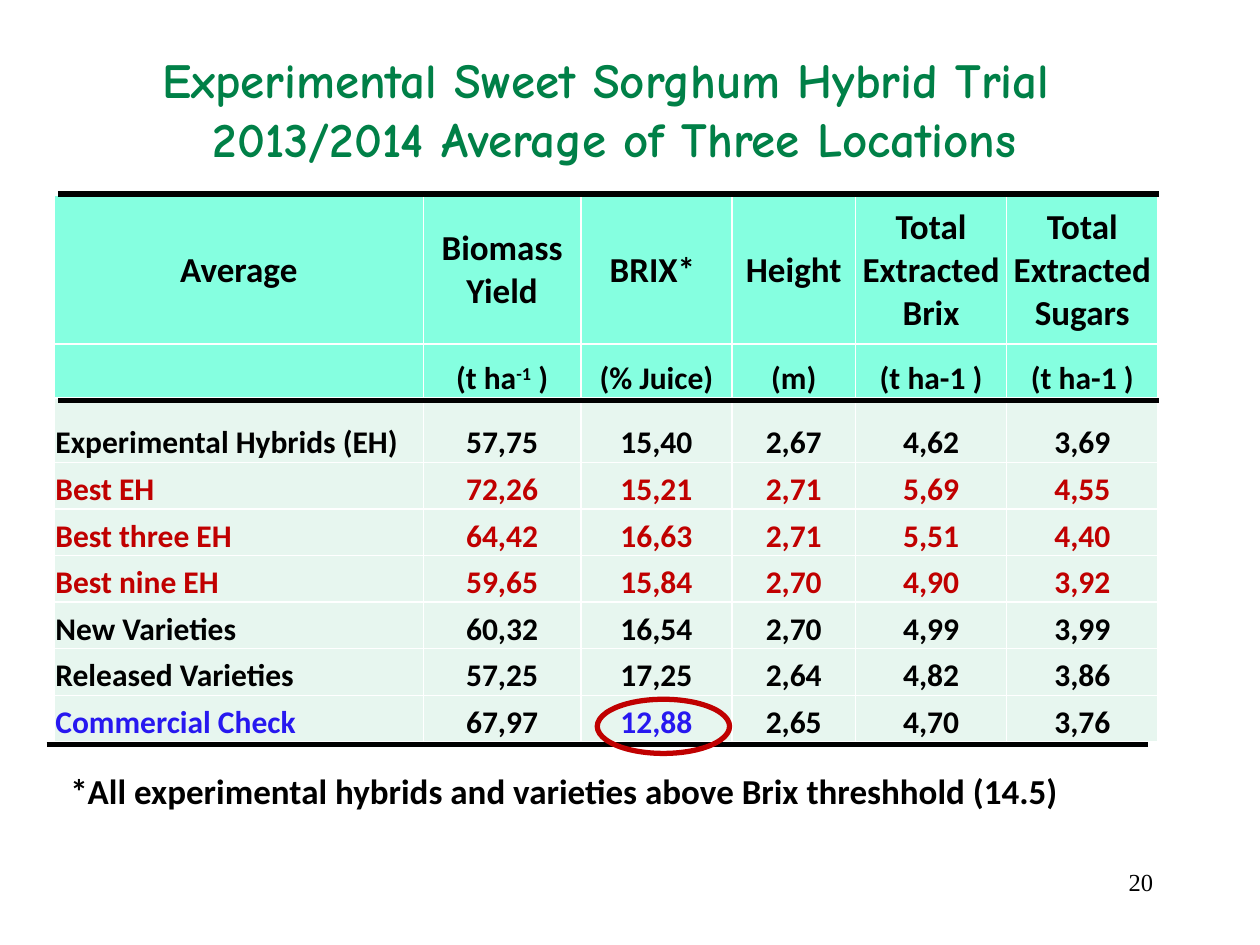
import pptx
import pptx.dml.color
import pptx.enum.shapes
import pptx.enum.text
import pptx.oxml
import pptx.oxml.ns
import pptx.util
from dataclasses import dataclass
from pptx.util import Inches

ALIGN = pptx.enum.text.PP_ALIGN
ANCHOR = pptx.enum.text.MSO_ANCHOR


@dataclass(frozen=True)
class Theme:
    black: str = "000000"
    white: str = "FFFFFF"
    green: str = "008047"
    red: str = "C00000"
    blue: str = "2718F0"
    header_fill: str = "85FFE0"
    body_fill: str = "E7F6EF"
    title_font: str = "Comic Neue"
    body_font: str = "Calibri"
    number_font: str = "Times New Roman"
    title_size: int = 28
    heading_size: int = 20
    cell_size: int = 18
    number_size: int = 14
    rule_width: int = 3


theme = Theme()


def rgb(color):
    return pptx.dml.color.RGBColor.from_string(color)


def style(paragraph, name, size, color, bold, align):
    paragraph.alignment = align
    font = paragraph.font
    font.name, font.size, font.bold = name, pptx.util.Pt(size), bold
    font.color.rgb = rgb(color)


presentation = pptx.Presentation()
presentation.slide_width = Inches(10)
presentation.slide_height = Inches(7.5)
slide = presentation.slides.add_slide(presentation.slide_layouts[5])

# Slide number
number = slide.shapes.add_textbox(Inches(7.17), Inches(6.83), Inches(2.08), Inches(0.5)).text_frame
number.word_wrap = True
number.text = "20"
style(number.paragraphs[0], theme.number_font, theme.number_size, theme.black, False, ALIGN.RIGHT)

# Trial results table
column_widths = [2.93, 1.25, 1.2, 0.98, 1.2, 1.2]
row_heights = [1.18, 0.43, 0.51] + [0.37] * 6
results = [
    ["Average", "Biomass Yield", "BRIX* ", "Height", "Total Extracted Brix", "Total Extracted Sugars"],
    ["", "(t ha^-1^ )", "(% Juice)", "(m)", "(t ha-1 )", "(t ha-1 )"],
    ["Experimental Hybrids (EH)", "57,75", "15,40", "2,67", "4,62", "3,69"],
    ["Best EH", "72,26", "15,21", "2,71", "5,69", "4,55"],
    ["Best three EH", "64,42", "16,63", "2,71", "5,51", "4,40"],
    ["Best nine EH", "59,65", "15,84", "2,70", "4,90", "3,92"],
    ["New Varieties", "60,32", "16,54", "2,70", "4,99", "3,99"],
    ["Released Varieties", "57,25", "17,25", "2,64", "4,82", "3,86"],
    ["Commercial Check", "67,97", "12,88", "2,65", "4,70", "3,76"],
]
check_row = len(results) - 1
table = slide.shapes.add_table(
    len(results), len(column_widths), Inches(0.43), Inches(1.55), Inches(8.77), Inches(4.37)
).table
table.first_row = table.horz_banding = False
for column, width in zip(table.columns, column_widths):
    column.width = Inches(width)
for table_row, height in zip(table.rows, row_heights):
    table_row.height = Inches(height)

for r, values in enumerate(results):
    for c, value in enumerate(values):
        cell = table.cell(r, c)
        cell.margin_left = cell.margin_right = cell.margin_top = Inches(0.01)
        cell.margin_bottom = 0
        cell.vertical_anchor = ANCHOR.MIDDLE if r == 0 else ANCHOR.BOTTOM

        # White cell borders come before the fill in the cell properties
        properties = cell._tc.get_or_add_tcPr()
        for side in ("lnL", "lnR", "lnT", "lnB"):
            properties.append(pptx.oxml.parse_xml(
                f'<a:{side} {pptx.oxml.ns.nsdecls("a")} w="12700"><a:solidFill>'
                f'<a:srgbClr val="{theme.white}"/></a:solidFill></a:{side}>'))
        cell.fill.solid()
        cell.fill.fore_color.rgb = rgb(theme.header_fill if r < 2 else theme.body_fill)

        # Best hybrids in red, the commercial check and its Brix in blue
        color = theme.black
        if 3 <= r <= 5:
            color = theme.red
        elif r == check_row and c in (0, 2):
            color = theme.blue
        paragraph = cell.text_frame.paragraphs[0]
        style(paragraph, theme.body_font, theme.heading_size if r == 0 else theme.cell_size,
              color, True, ALIGN.LEFT if c == 0 and r > 1 else ALIGN.CENTER)

        # Text between carets is superscript
        for i, part in enumerate(value.split("^")):
            if part:
                run = paragraph.add_run()
                run.text = part
                if i % 2:
                    run._r.get_or_add_rPr().set("baseline", "30000")

# Title
title = slide.shapes.title
title.left, title.top, title.width, title.height = Inches(0.65), Inches(0.34), Inches(8.45), Inches(1.04)
heading = title.text_frame
heading.text = "Experimental Sweet Sorghum Hybrid Trial \n2013/2014 Average of Three Locations"
heading.word_wrap = False
heading.auto_size = pptx.enum.text.MSO_AUTO_SIZE.NONE
heading.vertical_anchor = ANCHOR.TOP
for paragraph in heading.paragraphs:
    style(paragraph, theme.title_font, theme.title_size, theme.green, True, ALIGN.CENTER)

# Footnote
footnote = slide.shapes.add_textbox(Inches(0.46), Inches(6.06), Inches(8.17), Inches(0.44)).text_frame
footnote.word_wrap = False
footnote.text = "*All experimental hybrids and varieties above Brix threshhold (14.5)"
style(footnote.paragraphs[0], theme.body_font, theme.heading_size, theme.black, True, ALIGN.LEFT)

# Table rules
for left, top in ((0.46, 1.54), (0.46, 3.18), (0.37, 5.91)):
    rule = slide.shapes.add_connector(
        pptx.enum.shapes.MSO_CONNECTOR.STRAIGHT,
        Inches(left), Inches(top), Inches(left + 8.74), Inches(top))
    rule.line.color.rgb = rgb(theme.black)
    rule.line.width = pptx.util.Pt(theme.rule_width)
    rule._element.spPr.append(pptx.oxml.parse_xml(f'<a:effectLst {pptx.oxml.ns.nsdecls("a")}/>'))

# Ring around the Brix value of the commercial check
brix_ring = slide.shapes.add_shape(
    pptx.enum.shapes.MSO_SHAPE.OVAL, Inches(4.74), Inches(5.55), Inches(1.05), Inches(0.43))
brix_ring.shadow.inherit = False
brix_ring.fill.background()
brix_ring.line.color.rgb = rgb(theme.red)
brix_ring.line.width = pptx.util.Pt(theme.rule_width)

presentation.save("out.pptx")
